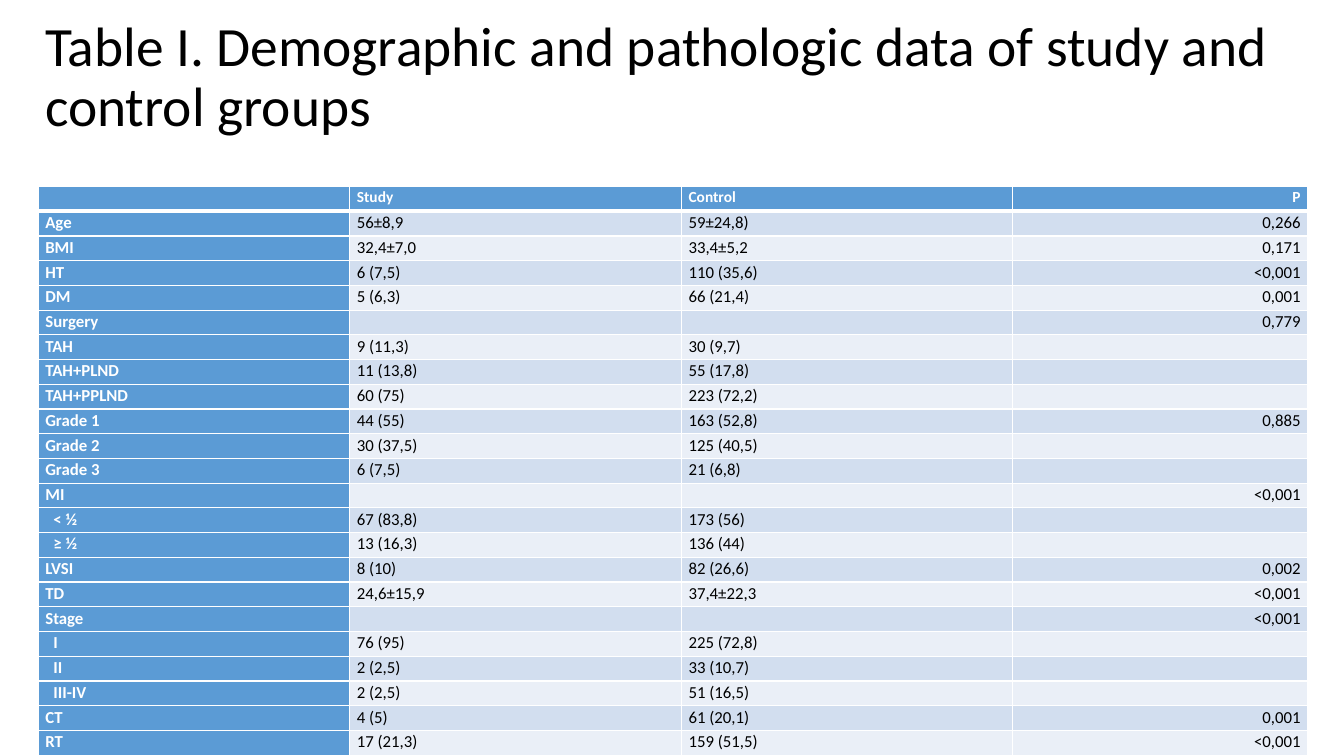
"""Build the slide with the demographic and pathologic data table."""
import dataclasses

import lxml.etree
import pptx
import pptx.dml.color
import pptx.enum.text
import pptx.oxml.ns
import pptx.util

Inches = pptx.util.Inches
ALIGN = pptx.enum.text.PP_ALIGN
ANCHOR = pptx.enum.text.MSO_ANCHOR


@dataclasses.dataclass(frozen=True)
class Theme:
    font: str = "Calibri"
    ink: str = "000000"
    white: str = "FFFFFF"
    header: str = "5B9BD5"
    bands: tuple = ("EAEFF7", "D2DEEF")
    title_size: float = 39.6
    header_size: float = 11
    body_size: float = 12
    border: float = 1
    header_border: float = 3


THEME = Theme()
TITLE = "Table I. Demographic and pathologic data of study and control groups"
COLUMN_WIDTHS = (3.09, 3.29, 3.28, 2.93)
TABLE_HEIGHT = 5.65
INDENTED = {"< ½", "≥ ½", "I", "II", "III-IV"}
ROWS = (
    ("", "Study", "Control", "P"),
    ("Age", "56±8,9", "59±24,8)", "0,266"),
    ("BMI", "32,4±7,0", "33,4±5,2", "0,171"),
    ("HT", "6 (7,5)", "110 (35,6)", "<0,001"),
    ("DM", "5 (6,3)", "66 (21,4)", "0,001"),
    ("Surgery", "", "", "0,779"),
    ("TAH", "9 (11,3)", "30 (9,7)", ""),
    ("TAH+PLND", "11 (13,8)", "55 (17,8)", ""),
    ("TAH+PPLND", "60 (75)", "223 (72,2)", ""),
    ("Grade 1", "44 (55)", "163 (52,8)", "0,885"),
    ("Grade 2", "30 (37,5)", "125 (40,5)", ""),
    ("Grade 3", "6 (7,5)", "21 (6,8)", ""),
    ("MI", "", "", "<0,001"),
    ("< ½", "67 (83,8)", "173 (56)", ""),
    ("≥ ½", "13 (16,3)", "136 (44)", ""),
    ("LVSI", "8 (10)", "82 (26,6)", "0,002"),
    ("TD", "24,6±15,9", "37,4±22,3", "<0,001"),
    ("Stage", "", "", "<0,001"),
    ("I", "76 (95)", "225 (72,8)", ""),
    ("II", "2 (2,5)", "33 (10,7)", ""),
    ("III-IV", "2 (2,5)", "51 (16,5)", ""),
    ("CT", "4 (5)", "61 (20,1)", "0,001"),
    ("RT", "17 (21,3)", "159 (51,5)", "<0,001"),
)


def rgb(value):
    return pptx.dml.color.RGBColor.from_string(value)


def add_element(parent, tag, **attributes):
    return lxml.etree.SubElement(parent, pptx.oxml.ns.qn(tag), **attributes)


def write_text(frame, text, *, size, color, bold=False, align=ALIGN.LEFT, spacing=1.0):
    para = frame.paragraphs[0]
    para.alignment = align
    para.line_spacing = spacing
    if not text:
        add_element(para._p, "a:endParaRPr", sz=str(int(size * 100)))
        return
    span = para.add_run()
    span.text = text
    span.font.name = THEME.font
    span.font.size = pptx.util.Pt(size)
    span.font.bold = bold
    span.font.color.rgb = rgb(color)


def add_title(page):
    box = page.shapes.add_textbox(Inches(0.35), Inches(0.05), Inches(12.47), Inches(1.45))
    frame = box.text_frame
    frame.word_wrap = True
    frame.vertical_anchor = ANCHOR.MIDDLE
    write_text(frame, TITLE, size=THEME.title_size, color=THEME.ink, spacing=0.9)


def set_borders(cell, top, bottom):
    properties = cell._tc.get_or_add_tcPr()
    widths = {"a:lnL": THEME.border, "a:lnR": THEME.border, "a:lnT": top, "a:lnB": bottom}
    for position, (tag, width) in enumerate(widths.items()):
        line = add_element(properties, tag, w=str(pptx.util.Pt(width)))
        add_element(add_element(line, "a:solidFill"), "a:srgbClr", val=THEME.white)
        properties.insert(position, line)


def fill_cell(cell, text, row, column):
    heading = row == 0 or column == 0
    cell.margin_left = Inches(0.15 if column == 0 and text in INDENTED else 0.07)
    cell.margin_right = Inches(0.07)
    cell.margin_top = cell.margin_bottom = 0
    cell.fill.solid()
    cell.fill.fore_color.rgb = rgb(THEME.header if heading else THEME.bands[row % 2])
    set_borders(
        cell,
        top=THEME.header_border if row == 1 else THEME.border,
        bottom=THEME.header_border if row == 0 else THEME.border,
    )
    write_text(
        cell.text_frame,
        text,
        size=THEME.header_size if row == 0 else THEME.body_size,
        color=THEME.white if heading else THEME.ink,
        bold=heading,
        align=ALIGN.RIGHT if column == len(COLUMN_WIDTHS) - 1 else ALIGN.LEFT,
        spacing=1.07,
    )


def add_data_table(page):
    table = page.shapes.add_table(
        len(ROWS), len(COLUMN_WIDTHS),
        Inches(0.38), Inches(1.85), Inches(sum(COLUMN_WIDTHS)), Inches(TABLE_HEIGHT),
    ).table
    table.first_col = True
    for column, width in zip(table.columns, COLUMN_WIDTHS):
        column.width = Inches(width)
    for row, texts in enumerate(ROWS):
        table.rows[row].height = Inches(TABLE_HEIGHT / len(ROWS))
        for column, text in enumerate(texts):
            fill_cell(table.cell(row, column), text, row, column)


def main():
    deck = pptx.Presentation()
    deck.slide_width = Inches(13.33)
    deck.slide_height = Inches(7.5)
    page = deck.slides.add_slide(deck.slide_layouts[6])
    add_title(page)
    add_data_table(page)
    deck.save("out.pptx")


if __name__ == "__main__":
    main()
